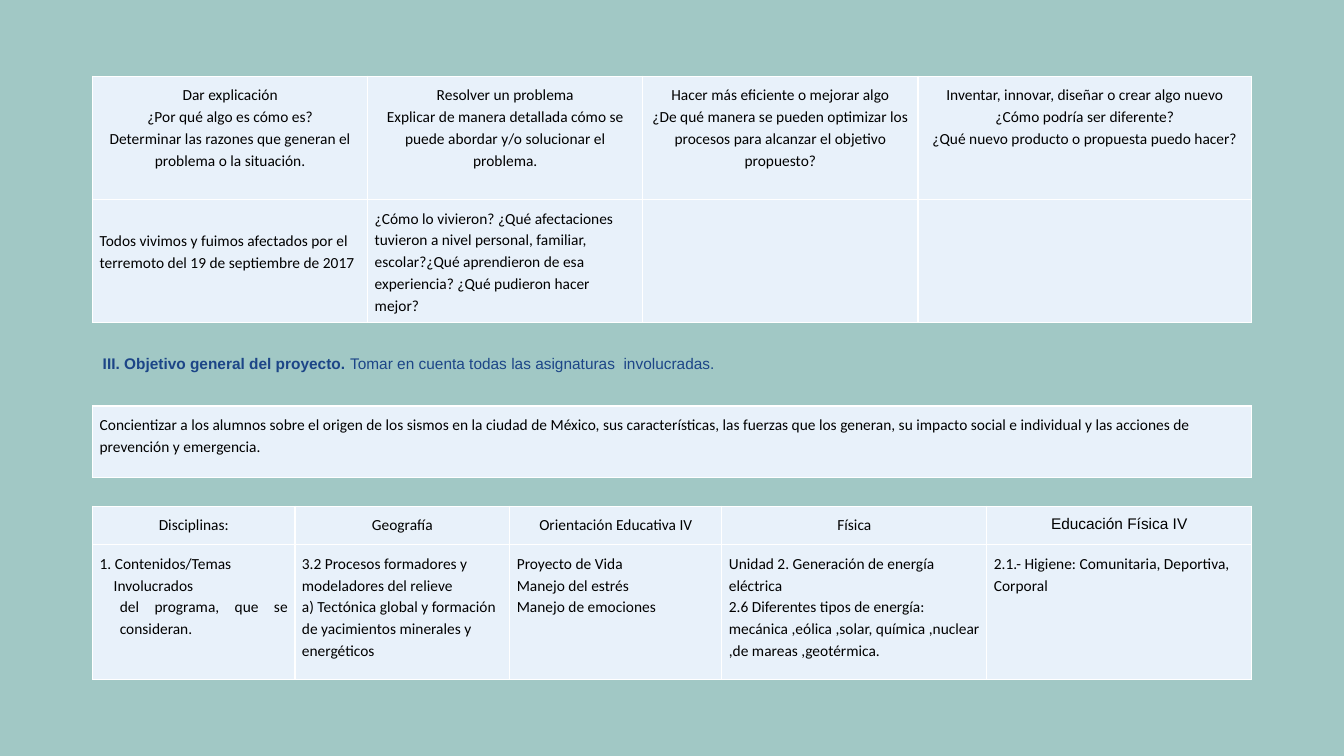
from dataclasses import dataclass, field

from pptx import Presentation
from pptx import util as u
from pptx.dml.color import RGBColor
from pptx.enum import text
from pptx.oxml import parse_xml
from pptx.oxml.ns import nsdecls

BACKGROUND = RGBColor(0xA1, 0xC8, 0xC5)
CELL_FILL = RGBColor(0xE8, 0xF1, 0xFA)
BLACK = RGBColor(0x00, 0x00, 0x00)
HEADING_BLUE = RGBColor(0x1C, 0x45, 0x87)
BORDER = RGBColor(0xFF, 0xFF, 0xFF)

LEFT, WIDTH = 66.2, 828
INSET = 5
FONT_SIZE = u.Pt(11)
LEFT_ALIGN = text.PP_ALIGN.LEFT
CENTER = text.PP_ALIGN.CENTER
JUSTIFY = text.PP_ALIGN.JUSTIFY


@dataclass
class Entry:
    """Content of one cell: its paragraphs and their layout."""
    lines: list[str] = field(default_factory=list)
    align: text.PP_ALIGN = LEFT_ALIGN
    font: str = "Calibri"
    indents: list[float] = field(default_factory=list)
    top_inset: float = INSET


@dataclass
class Grid:
    """A table with its place, in points."""
    top: float
    columns: list[float]
    heights: list[float]
    rows: list[list[Entry]]


def header(*lines: str, font: str = "Calibri") -> Entry:
    return Entry(list(lines), CENTER, font)


def body(*lines: str) -> Entry:
    return Entry(list(lines))


QUESTIONS = Grid(54.5, [196.5, 196.5, 196.5, 238.5], [88, 88], [
    [
        header("Dar explicación", "¿Por qué algo es cómo es?",
               "Determinar las razones que generan el problema o la situación."),
        header("Resolver un problema",
               "Explicar de manera detallada cómo se puede abordar y/o "
               "solucionar el problema."),
        header("Hacer más eficiente o mejorar algo",
               "¿De qué manera se pueden optimizar los procesos para alcanzar "
               "el objetivo propuesto?"),
        header("Inventar, innovar, diseñar o crear algo nuevo",
               "¿Cómo podría ser diferente?",
               "¿Qué nuevo producto o propuesta puedo hacer?"),
    ],
    [
        Entry(["Todos vivimos y fuimos afectados por el terremoto del 19 de "
               "septiembre de 2017"], top_inset=21),
        body("¿Cómo lo vivieron? ¿Qué afectaciones tuvieron a nivel personal, "
             "familiar, escolar?¿Qué aprendieron de esa experiencia? ¿Qué "
             "pudieron hacer mejor?"),
        body(),
        body(),
    ],
])

OBJECTIVE = Grid(290, [WIDTH], [51], [[
    body("Concientizar a los alumnos sobre el origen de los sismos en la ciudad "
         "de México, sus características, las fuerzas que los generan, su "
         "impacto social e individual y las acciones de prevención y "
         "emergencia."),
]])

DISCIPLINES = Grid(361.5, [144.5, 153.5, 151.5, 189.25, 189.25], [27.5, 96.5], [
    [
        header("Disciplinas:"),
        header("Geografía"),
        header("Orientación Educativa IV"),
        header("Física"),
        header("Educación Física IV", font="Arial"),
    ],
    [
        Entry(["1. Contenidos/Temas", "Involucrados",
               "del programa, que se consideran."],
              JUSTIFY, indents=[0, 10, 14.4]),
        body("3.2 Procesos formadores y modeladores del relieve",
             "a) Tectónica global y formación de yacimientos minerales y "
             "energéticos"),
        body("Proyecto de Vida", "Manejo del estrés", "Manejo de emociones"),
        body("Unidad 2. Generación de energía eléctrica",
             "2.6 Diferentes tipos de energía: mecánica ,eólica ,solar, química "
             ",nuclear ,de mareas ,geotérmica."),
        body("2.1.- Higiene: Comunitaria, Deportiva, Corporal"),
    ],
])

HEADING = [
    ("III. Objetivo general del proyecto. ", True),
    ("Tomar en cuenta todas las asignaturas  involucradas.", False),
]


def format_cell(cell, entry: Entry) -> None:
    # Borders come before the fill in the cell properties
    properties = cell._tc.get_or_add_tcPr()
    for side in ("lnL", "lnR", "lnT", "lnB"):
        properties.append(parse_xml(
            f'<a:{side} {nsdecls("a")} w="{u.Pt(1)}"><a:solidFill>'
            f'<a:srgbClr val="{BORDER}"/></a:solidFill></a:{side}>'))
    cell.fill.solid()
    cell.fill.fore_color.rgb = CELL_FILL
    cell.margin_left = cell.margin_right = cell.margin_bottom = u.Pt(INSET)
    cell.margin_top = u.Pt(entry.top_inset)

    tf = cell.text_frame
    for i, line in enumerate(entry.lines):
        p = tf.add_paragraph() if i else tf.paragraphs[0]
        p.text = line
        p.alignment = entry.align
        p.line_spacing = 1.15
        p.font.name = entry.font
        p.font.size = FONT_SIZE
        p.font.color.rgb = BLACK
        p.font.bold = False
        if entry.indents:
            p._p.get_or_add_pPr().set("marL", str(u.Pt(entry.indents[i])))


def draw_grid(s, grid: Grid) -> None:
    frame = s.shapes.add_table(
        len(grid.rows), len(grid.columns), u.Pt(LEFT), u.Pt(grid.top),
        u.Pt(WIDTH), u.Pt(sum(grid.heights)))
    table = frame.table
    table.first_row = table.horz_banding = False
    for column, width in zip(table.columns, grid.columns):
        column.width = u.Pt(width)
    for row, height, entries in zip(table.rows, grid.heights, grid.rows):
        row.height = u.Pt(height)
        for cell, entry in zip(row.cells, entries):
            format_cell(cell, entry)


def draw_heading(s) -> None:
    sp = s.shapes.title
    sp.left, sp.top = u.Pt(LEFT), u.Pt(249)
    sp.width, sp.height = u.Pt(WIDTH), u.Pt(21)
    tf = sp.text_frame
    tf.word_wrap = True
    tf.auto_size = text.MSO_AUTO_SIZE.NONE
    tf.vertical_anchor = text.MSO_ANCHOR.MIDDLE
    p = tf.paragraphs[0]
    p.alignment = LEFT_ALIGN
    p.font.name = "Arial"
    p.font.size = FONT_SIZE
    p.font.color.rgb = HEADING_BLUE
    for words, bold in HEADING:
        r = p.add_run()
        r.text = words
        r.font.bold = bold


def main() -> None:
    prs = Presentation()
    prs.slide_width, prs.slide_height = u.Pt(960), u.Pt(540)
    s = prs.slides.add_slide(prs.slide_layouts.get_by_name("Title Only"))
    s.background.fill.solid()
    s.background.fill.fore_color.rgb = BACKGROUND

    draw_heading(s)
    for grid in (QUESTIONS, OBJECTIVE, DISCIPLINES):
        draw_grid(s, grid)
    prs.save("out.pptx")


if __name__ == "__main__":
    main()
